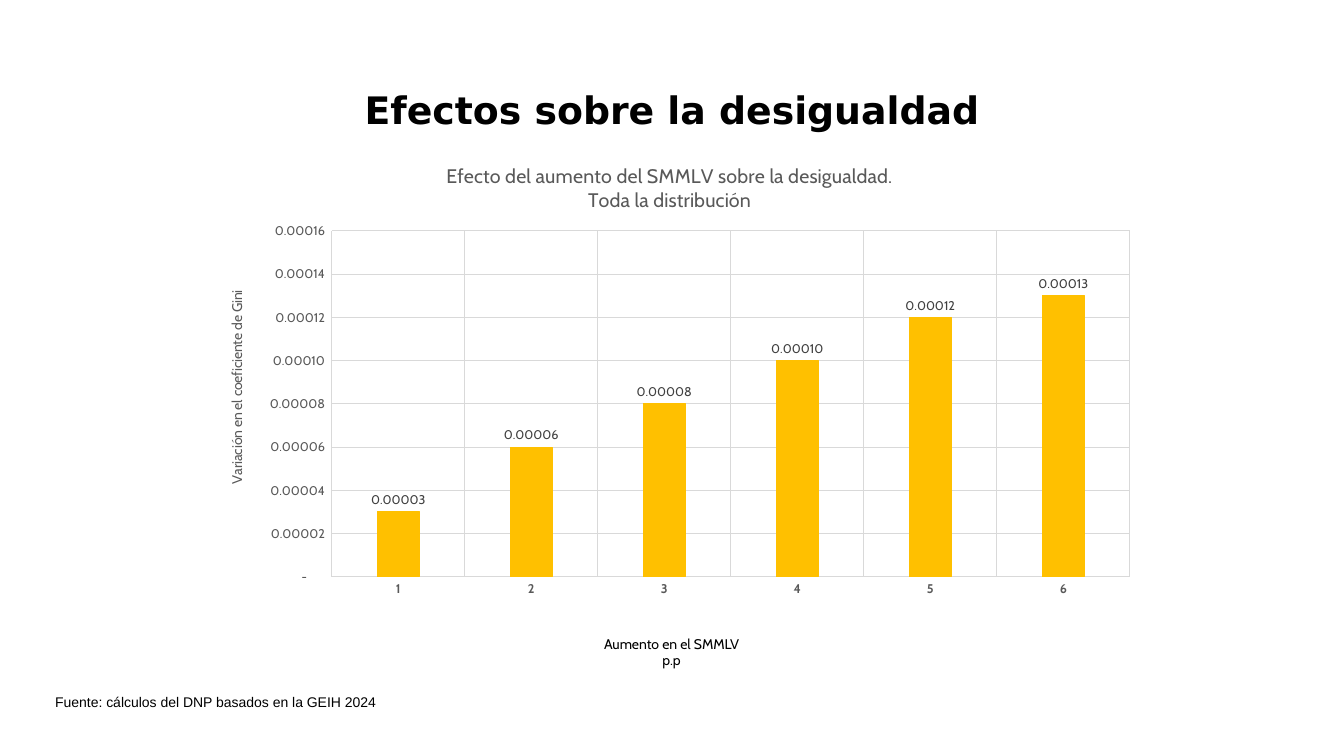
from lxml import etree
from pptx import Presentation
from pptx import util as u
from pptx.chart.data import CategoryChartData
from pptx.dml.color import RGBColor
from pptx.enum import chart as ch, text
from pptx.oxml.ns import qn

COLORS = {"ink": "000000", "title": "595959", "label": "404040",
          "grid": "D9D9D9", "bar": "FFC000"}
GINI_CHANGE = {1: 0.00003, 2: 0.00006, 3: 0.00008,
               4: 0.00010, 5: 0.00012, 6: 0.00013}
AXIS_FORMAT = r'_-* #,##0.00000_-;\-* #,##0.00000_-;_-* "-"??_-;_-@_-'


def rgb(name):
    return RGBColor.from_string(COLORS[name])


def style(font, size, color, face="Cabin", bold=False):
    font.size, font.name, font.bold = u.Pt(size), face, bold
    font.color.rgb = rgb(color)


def write(frame, wording, size=10, color="ink", face="Cabin", bold=False,
          align=text.PP_ALIGN.CENTER, spacing=None):
    for number, line in enumerate(wording.split("\n")):
        paragraph = frame.add_paragraph() if number else frame.paragraphs[0]
        paragraph.alignment = align
        if spacing:
            paragraph.line_spacing = spacing
        run = paragraph.add_run()
        run.text = line
        style(run.font, size, color, face, bold)


def text_region(slide, box, wording, anchor=text.MSO_ANCHOR.TOP, **format):
    frame = slide.shapes.add_textbox(*map(u.Cm, box)).text_frame
    frame.word_wrap = True
    frame.vertical_anchor = anchor
    write(frame, wording, **format)


def place(parent, position, **settings):
    layout = parent.find(qn("c:layout"))
    if layout is None:
        layout = etree.Element(qn("c:layout"))
        tx = parent.find(qn("c:tx"))
        if tx is None:
            parent.insert(0, layout)
        else:
            tx.addnext(layout)
    for child in list(layout):
        layout.remove(child)
    manual = etree.SubElement(layout, qn("c:manualLayout"))
    values = {**settings, "xMode": "edge", "yMode": "edge",
              **dict(zip("xywh", position))}
    for tag, value in values.items():
        etree.SubElement(manual, qn(f"c:{tag}")).set("val", str(value))


def style_axis(axis, bold=False):
    axis.major_tick_mark = axis.minor_tick_mark = ch.XL_TICK_MARK.NONE
    axis.has_major_gridlines = True
    grid = axis.major_gridlines.format.line
    grid.width = u.Pt(0.75)
    grid.color.rgb = rgb("grid")
    style(axis.tick_labels.font, 9, "title", bold=bold)


def inequality_chart(slide, box):
    data = CategoryChartData(number_format="0.00000")
    data.categories = [str(points) for points in GINI_CHANGE]
    data.add_series("Variación en el coeficiente de Gini", GINI_CHANGE.values())
    chart = slide.shapes.add_chart(
        ch.XL_CHART_TYPE.COLUMN_CLUSTERED, *map(u.Cm, box), data).chart
    style(chart.font, 10, "ink")
    chart.has_legend = False

    chart.has_title = True
    write(chart.chart_title.text_frame,
          "Efecto del aumento del SMMLV sobre la desigualdad.\n"
          "Toda la distribución", size=14, color="title")
    place(chart.chart_title._element, (0.26, 0.04))
    place(chart._chartSpace.chart.plotArea, (0.143, 0.191, 0.838, 0.727),
          layoutTarget="inner")

    increase, change = chart.category_axis, chart.value_axis
    style_axis(increase, bold=True)
    increase.format.line.width = u.Pt(0.75)
    increase.format.line.color.rgb = rgb("grid")
    style_axis(change)
    change.format.line.fill.background()
    change.minimum_scale, change.maximum_scale = 0, 0.00016
    change.major_unit = 0.00002
    change.tick_labels.number_format = AXIS_FORMAT
    change.tick_labels.number_format_is_linked = False
    change.has_title = True
    write(change.axis_title.text_frame, "Variación en el coeficiente de Gini",
          color="title")
    change.axis_title._element.find(
        ".//" + qn("a:bodyPr")).set("rot", "-5400000")
    place(change.axis_title._element, (0.03, 0.31))

    plot = chart.plots[0]
    plot.gap_width, plot.overlap, plot.vary_by_categories = 219, -27, False
    bars = plot.series[0].format
    bars.fill.solid()
    bars.fill.fore_color.rgb = rgb("bar")
    bars.line.width = u.Pt(0.75)
    bars.line.color.rgb = rgb("bar")
    plot.has_data_labels = True
    labels = plot.data_labels
    labels.show_value = True
    labels.position = ch.XL_LABEL_POSITION.OUTSIDE_END
    labels.number_format = "0.00000"
    labels.number_format_is_linked = False
    style(labels.font, 9, "label")


def main():
    deck = Presentation()
    deck.slide_width, deck.slide_height = u.Cm(33.87), u.Cm(19.05)
    slide = deck.slides.add_slide(deck.slide_layouts[6])
    text_region(slide, (2.33, 2.13, 29.21, 1.4), "Efectos sobre la desigualdad",
                anchor=text.MSO_ANCHOR.MIDDLE, size=27, face="DejaVu Sans",
                bold=True, spacing=0.9)
    inequality_chart(slide, (4.93, 3.53, 24, 11.99))
    text_region(slide, (14.6, 15.88, 4.65, 1.12), "Aumento en el SMMLV\np.p")
    text_region(slide, (1.14, 17.4, 29.57, 0.7),
                "Fuente: cálculos del DNP basados en la GEIH 2024",
                face="Arial", align=text.PP_ALIGN.LEFT, spacing=0.9)
    deck.save("out.pptx")


if __name__ == "__main__":
    main()
